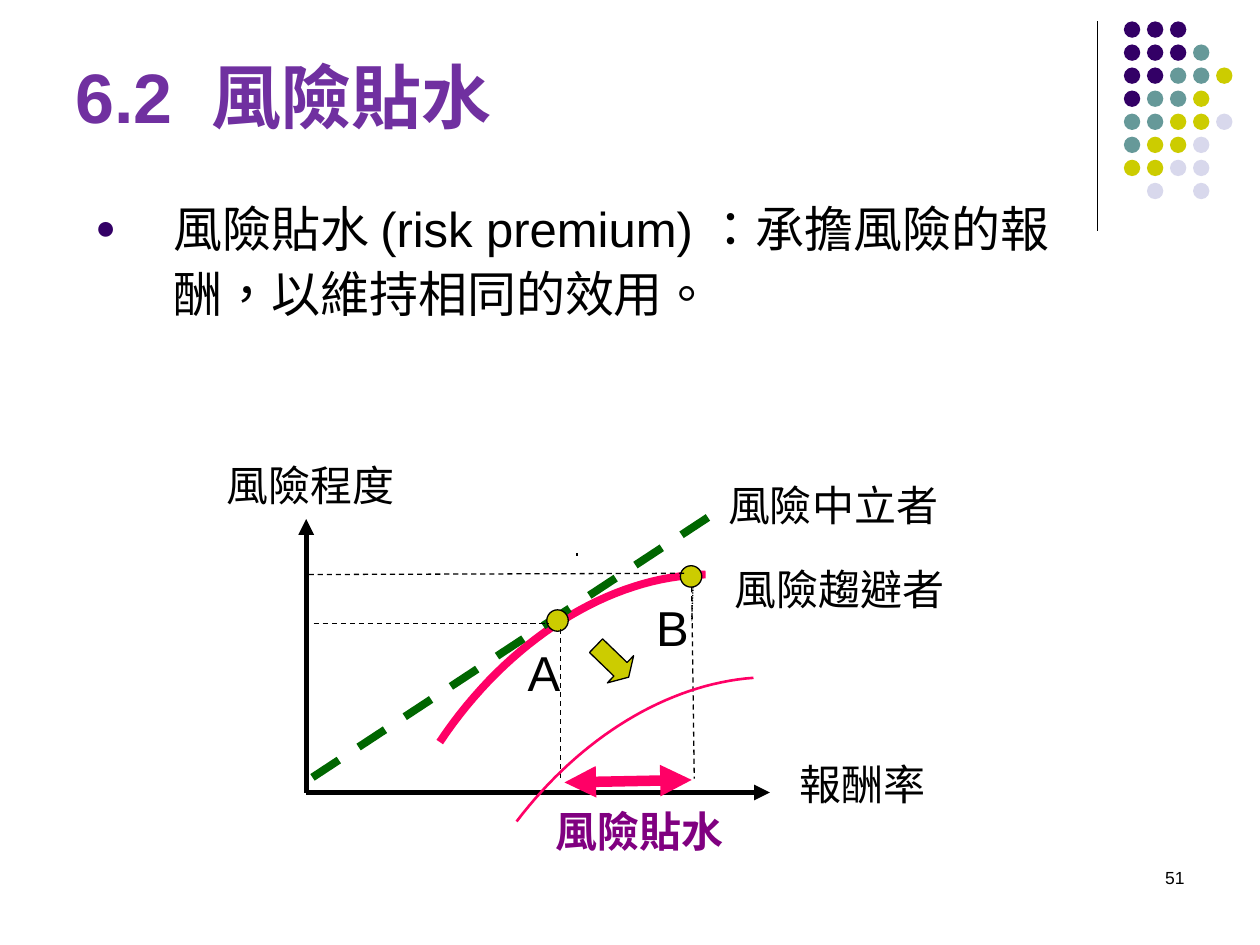
"""Build the risk premium slide with its risk and return diagram."""
import pptx
import pptx.dml.color
import pptx.enum.dml
import pptx.enum.shapes
import pptx.enum.text
import pptx.util
from lxml import etree
from pptx.util import Inches

COLORS = {
    "black": "000000", "indigo": "330066", "teal": "669999", "olive": "CCCC00",
    "lavender": "D8D8EC", "title": "7030A0", "pink": "FF0066",
    "green": "006600", "purple": "800080",
}
DOT_COLORS = {"I": "indigo", "T": "teal", "O": "olive", "L": "lavender"}
DOT_ROWS = ["III", "IIIT", "IITTO", "ITTO", "TTOOL", "TOOL", "OOLL", " L L"]
SHAPE = pptx.enum.shapes.MSO_SHAPE
DASH = pptx.enum.dml.MSO_LINE
ANCHOR = pptx.enum.text.MSO_ANCHOR
ALIGN = pptx.enum.text.PP_ALIGN


def rgb(name):
    return pptx.dml.color.RGBColor.from_string(COLORS[name])


def add_xml(parent, tag, **attributes):
    return etree.SubElement(parent, pptx.oxml.ns.qn(tag), attributes)


def cubic(points, steps=32):
    curve = []
    for step in range(steps + 1):
        t = step / steps
        weights = ((1 - t) ** 3, 3 * t * (1 - t) ** 2, 3 * t * t * (1 - t), t ** 3)
        curve.append(tuple(Inches(sum(w * p[axis] for w, p in zip(weights, points)))
                           for axis in (0, 1)))
    return curve


class Sketch:
    def __init__(self, page, font="Arial"):
        self.page = page
        self.font = font

    def outline(self, line, color, width, dash=None):
        line.color.rgb = rgb(color)
        line.width = pptx.util.Pt(width)
        if dash:
            line.dash_style = dash

    def text(self, place, words, size, color="black", bold=False, wrap=False,
             anchor=ANCHOR.TOP, align=ALIGN.LEFT):
        box = self.page.shapes.add_textbox(*map(Inches, place))
        frame = box.text_frame
        frame.text = words
        frame.word_wrap = wrap
        frame.vertical_anchor = anchor
        para = frame.paragraphs[0]
        para.alignment = align
        span = para.runs[0]
        span._r.get_or_add_rPr().set("lang", "zh-TW")
        font = span.font
        font.name, font.size, font.bold = self.font, pptx.util.Pt(size), bold
        font.color.rgb = rgb(color)
        return para

    def bullet(self, para, symbol, color, percent, indent):
        para.line_spacing = 1.1
        para.space_before = pptx.util.Pt(5.6)
        props = para._p.get_or_add_pPr()
        props.set("marL", str(Inches(indent)))
        props.set("indent", str(-Inches(indent)))
        add_xml(add_xml(props, "a:buClr"), "a:srgbClr", val=COLORS[color])
        add_xml(props, "a:buSzPct", val=str(percent * 1000))
        add_xml(props, "a:buFont", typeface=self.font)
        add_xml(props, "a:buChar", char=symbol)

    def line(self, start, end, color="black", width=0.75, dash=None, arrows=()):
        link = self.page.shapes.add_connector(
            pptx.enum.shapes.MSO_CONNECTOR.STRAIGHT, *map(Inches, start + end))
        self.outline(link.line, color, width, dash)
        for arrow in arrows:
            add_xml(link.line._get_or_add_ln(), arrow, type="triangle")
        add_xml(link._element.spPr, "a:effectLst")

    def shape(self, kind, place, fill, outlined=True, rotation=0, group=None):
        shapes = (group or self.page).shapes
        item = shapes.add_shape(kind, *map(Inches, place))
        item.shadow.inherit = False
        item.fill.solid()
        item.fill.fore_color.rgb = rgb(fill)
        item.rotation = rotation
        if outlined:
            self.outline(item.line, "black", 0.75)
        else:
            item.line.fill.background()
        return item

    def curve(self, points, color, width):
        first, *rest = cubic(points)
        builder = self.page.shapes.build_freeform(*first)
        builder.add_line_segments(rest, close=False)
        item = builder.convert_to_shape()
        item.shadow.inherit = False
        item.fill.background()
        self.outline(item.line, color, width)

    def dot_grid(self, left, top, step, size):
        group = self.page.shapes.add_group_shape()
        for row, letters in enumerate(DOT_ROWS):
            for column, letter in enumerate(letters):
                if letter in DOT_COLORS:
                    place = (left + column * step, top + row * step, size, size)
                    self.shape(SHAPE.OVAL, place, DOT_COLORS[letter], False, group=group)


def main():
    deck = pptx.Presentation()
    deck.slide_width, deck.slide_height = Inches(10), Inches(7.5)
    sketch = Sketch(deck.slides.add_slide(deck.slide_layouts[6]))

    sketch.line((8.71, 0.17), (8.71, 1.83))
    sketch.dot_grid(8.92, 0.17, 0.183, 0.13)
    sketch.text((7.17, 6.83, 2.33, 0.5), "51", 10, wrap=True, align=ALIGN.RIGHT)
    sketch.text((0.5, 0.13, 8.16, 1.01), "6.2  風險貼水", 40, "title", True, True,
                ANCHOR.BOTTOM)
    body = sketch.text((0.66, 1.48, 7.96, 1.55),
                       "風險貼水 (risk premium) ：承擔風險的報酬，以維持相同的效用。",
                       28, wrap=True)
    sketch.bullet(body, "●", "indigo", 70, 0.62)

    for end in ((6.11, 6.29), (2.43, 4.12)):
        sketch.line((2.43, 6.29), end, width=3, arrows=["a:tailEnd"])
    sketch.curve([(3.49, 5.89), (4.03, 5.08), (4.84, 4.57), (5.6, 4.56)], "pink", 4.5)
    sketch.line((2.48, 6.17), (5.69, 4.06), "green", 4.5, DASH.DASH)
    sketch.line((4.58, 4.39), (4.58, 4.41))
    sketch.line((5.5, 4.66), (5.49, 4.93), dash=DASH.ROUND_DOT)
    for left, top in ((4.34, 4.84), (5.4, 4.49)):
        sketch.shape(SHAPE.OVAL, (left, top, 0.17, 0.17), "olive")
    sketch.line((4.48, 6.21), (5.49, 6.19), "pink", 6,
                arrows=["a:headEnd", "a:tailEnd"])

    for place, words in (
        ((1.7, 3.6, 1.86, 0.5), "風險程度"),
        ((6.25, 5.97, 1.2, 0.5), "報酬率"),
        ((5.68, 3.76, 1.87, 0.5), "風險中立者"),
        ((5.73, 4.42, 1.87, 0.5), "風險趨避者"),
    ):
        sketch.text(place, words, 24, wrap=words == "風險程度")
    sketch.text((4.31, 6.34, 1.53, 0.5), "風險貼水", 24, "purple", True)
    for left, top, letter in ((4.09, 5.05, "A"), (5.11, 4.69, "B")):
        sketch.text((left, top, 0.46, 0.57), letter, 28, wrap=True)

    for start, end in (
        ((2.49, 4.95), (4.36, 4.95)),
        ((2.45, 4.56), (5.43, 4.55)),
        ((5.49, 4.66), (5.51, 6.18)),
        ((4.45, 4.99), (4.45, 6.19)),
    ):
        sketch.line(start, end, dash=DASH.DASH)
    sketch.curve([(4.1, 6.52), (4.61, 5.85), (5.3, 5.43), (5.98, 5.38)], "pink", 1.5)
    arrow = sketch.shape(SHAPE.RIGHT_ARROW, (4.68, 5.1, 0.36, 0.3), "olive", rotation=44)
    arrow.adjustments[1] = 0.3

    deck.save("out.pptx")


if __name__ == "__main__":
    main()
